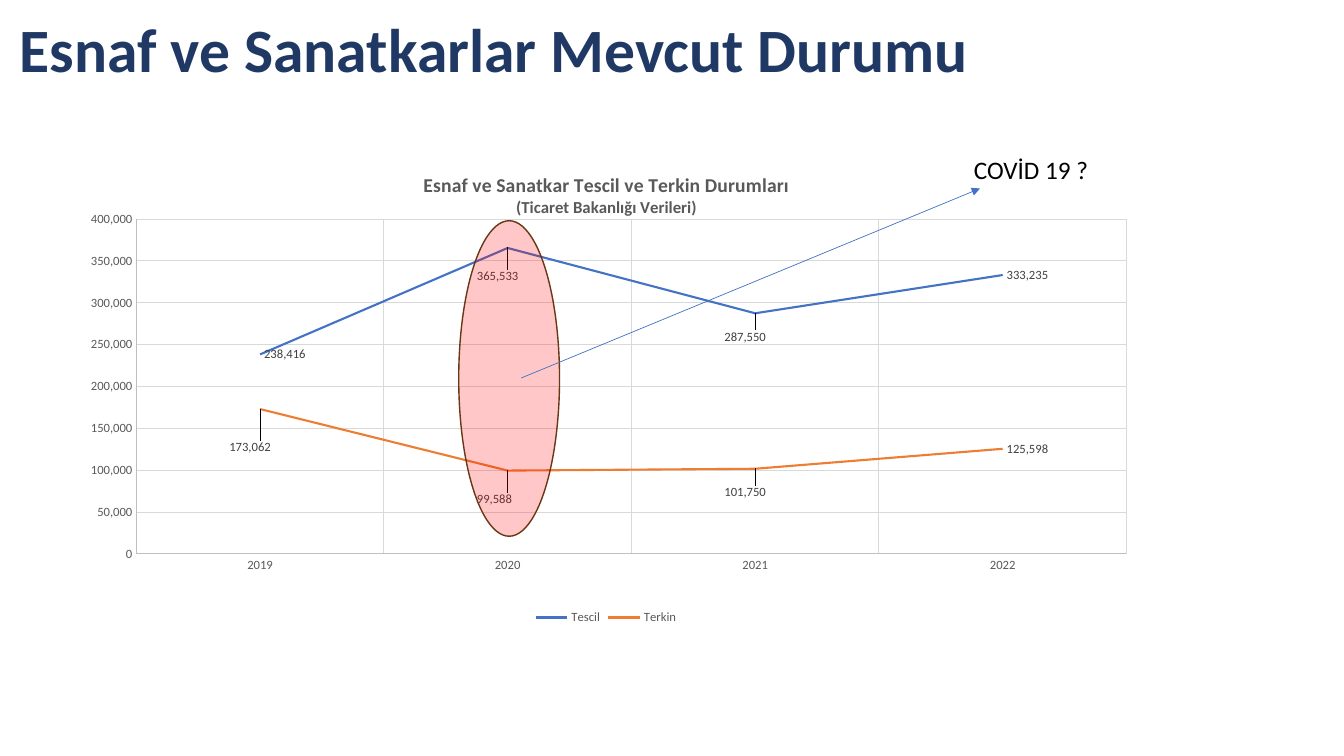
from dataclasses import dataclass

from lxml import etree
from pptx import Presentation
from pptx.chart.data import CategoryChartData
from pptx.dml.color import RGBColor
from pptx.enum.chart import XL_CHART_TYPE, XL_LABEL_POSITION, XL_LEGEND_POSITION, XL_TICK_MARK
from pptx.enum.shapes import MSO_CONNECTOR, MSO_SHAPE
from pptx.enum.text import MSO_ANCHOR
from pptx.oxml.ns import qn
from pptx.util import Inches, Pt

LINE_CHART = XL_CHART_TYPE.LINE
LABEL_RIGHT = XL_LABEL_POSITION.RIGHT
LEGEND_BOTTOM = XL_LEGEND_POSITION.BOTTOM
NO_TICK = XL_TICK_MARK.NONE
STRAIGHT = MSO_CONNECTOR.STRAIGHT
OVAL = MSO_SHAPE.OVAL
MIDDLE = MSO_ANCHOR.MIDDLE
TOP = MSO_ANCHOR.TOP


@dataclass(frozen=True)
class Theme:
    font: str = "Calibri"
    navy: str = "203864"
    black: str = "000000"
    gray: str = "595959"
    label_gray: str = "404040"
    axis: str = "BFBFBF"
    grid: str = "D9D9D9"
    blue: str = "4472C4"
    orange: str = "ED7D31"
    red: str = "FF0000"
    brown: str = "683715"
    heading_size: int = 44
    note_size: int = 18
    chart_title_size: int = 14
    chart_subtitle_size: int = 12
    chart_size: int = 9


THEME = Theme()
YEARS = ["2019", "2020", "2021", "2022"]
SERIES = [
    ("Tescil", THEME.blue, [238416, 365533, 287550, 333235],
     {1: (-0.03, 0.06), 2: (-0.03, 0.05)}),
    ("Terkin", THEME.orange, [173062, 99588, 101750, 125598],
     {0: (-0.03, 0.08), 1: (-0.03, 0.06), 2: (-0.03, 0.05)}),
]
CHART_TITLE = [
    ("Esnaf ve Sanatkar Tescil ve Terkin Durumları", THEME.chart_title_size),
    ("(Ticaret Bakanlığı Verileri)", THEME.chart_subtitle_size),
]


def style_font(font, size, color, bold=False):
    font.name = THEME.font
    font.size = Pt(size)
    font.bold = bold
    font.color.rgb = RGBColor.from_string(color)


def style_line(line, color, width):
    line.color.rgb = RGBColor.from_string(color)
    line.width = Pt(width)


def add_text(slide, box, text, size, color, bold=False, wrap=True, anchor=TOP, spacing=1.0):
    shape = slide.shapes.add_textbox(*map(Inches, box))
    frame = shape.text_frame
    frame.word_wrap = wrap
    frame.vertical_anchor = anchor
    paragraph = frame.paragraphs[0]
    paragraph.line_spacing = spacing
    run = paragraph.add_run()
    run.text = text
    style_font(run.font, size, color, bold)


def set_layout(parent, position, **settings):
    for existing in parent.findall(qn("c:layout")):
        parent.remove(existing)
    layout = etree.Element(qn("c:layout"))
    manual = etree.SubElement(layout, qn("c:manualLayout"))
    for name, value in settings.items():
        etree.SubElement(manual, qn(f"c:{name}"), val=str(value))
    parent.insert(position, layout)


def style_axis(axis):
    axis.major_tick_mark = NO_TICK
    axis.minor_tick_mark = NO_TICK
    axis.has_major_gridlines = True
    style_line(axis.major_gridlines.format.line, THEME.grid, 0.75)
    style_line(axis.format.line, THEME.axis, 0.75)
    style_font(axis.tick_labels.font, THEME.chart_size, THEME.gray)


def add_chart_title(chart):
    chart.has_title = True
    title = chart.chart_title
    frame = title.text_frame
    for index, (text, size) in enumerate(CHART_TITLE):
        paragraph = frame.add_paragraph() if index else frame.paragraphs[0]
        run = paragraph.add_run()
        run.text = text
        style_font(run.font, size, THEME.gray, bold=True)
    set_layout(title._element, 1, xMode="edge", yMode="edge", x=0.34, y=0.04)


def style_series(series, color, label_offsets):
    series.smooth = False
    style_line(series.format.line, color, 1.5)
    labels = series.data_labels
    labels.show_value = True
    labels.position = LABEL_RIGHT
    style_font(labels.font, THEME.chart_size, THEME.label_gray)
    for index, (x, y) in label_offsets.items():
        label = series.points[index].data_label
        style_font(label.font, THEME.chart_size, THEME.label_gray)
        label.position = LABEL_RIGHT
    for element in series._element.iter(qn("c:dLbl")):
        x, y = label_offsets[int(element.find(qn("c:idx")).get("val"))]
        set_layout(element, 1, x=x, y=y)


def add_registration_chart(slide, box):
    data = CategoryChartData(number_format="#,##0")
    data.categories = YEARS
    for name, _, values, _ in SERIES:
        data.add_series(name, values)
    chart = slide.shapes.add_chart(LINE_CHART, *map(Inches, box), data).chart
    style_font(chart.font, THEME.chart_size, THEME.gray)
    add_chart_title(chart)
    chart.has_legend = True
    chart.legend.position = LEGEND_BOTTOM
    chart.legend.include_in_layout = False
    style_font(chart.legend.font, THEME.chart_size, THEME.gray)
    style_axis(chart.category_axis)
    style_axis(chart.value_axis)
    chart.value_axis.minimum_scale = 0
    chart.value_axis.maximum_scale = 400000
    chart.value_axis.major_unit = 50000
    chart.value_axis.tick_labels.number_format = "#,##0"
    chart.value_axis.tick_labels.number_format_is_linked = False
    plot = chart.plots[0]
    plot.vary_by_categories = False
    for series, (_, color, _, offsets) in zip(plot.series, SERIES):
        style_series(series, color, offsets)
    plot_area = chart._chartSpace.find(f".//{qn('c:plotArea')}")
    set_layout(plot_area, 0, layoutTarget="inner", xMode="edge", yMode="edge",
               x=0.095, y=0.146, w=0.854, h=0.698)


def add_highlight(slide, box):
    shape = slide.shapes.add_shape(OVAL, *map(Inches, box))
    shape.shadow.inherit = False
    shape.fill.solid()
    shape.fill.fore_color.rgb = RGBColor.from_string(THEME.red)
    color = shape.fill._xPr.find(f".//{qn('a:srgbClr')}")
    etree.SubElement(color, qn("a:alpha"), val="22000")
    style_line(shape.line, THEME.brown, 1)


def add_arrow(slide, start, end):
    connector = slide.shapes.add_connector(STRAIGHT, *map(Inches, start + end))
    style_line(connector.line, THEME.blue, 0.5)
    properties = connector._element.spPr
    etree.SubElement(properties.find(qn("a:ln")), qn("a:tailEnd"), type="triangle")
    etree.SubElement(properties, qn("a:effectLst"))


def main():
    presentation = Presentation()
    presentation.slide_width = Inches(13.33)
    presentation.slide_height = Inches(7.5)
    slide = presentation.slides.add_slide(presentation.slide_layouts[6])
    add_text(slide, (0.1, 0.05, 11.5, 0.95), "Esnaf ve Sanatkarlar Mevcut Durumu",
             THEME.heading_size, THEME.navy, bold=True, anchor=MIDDLE, spacing=0.9)
    add_registration_chart(slide, (0.26, 1.48, 11.5, 4.76))
    add_highlight(slide, (4.55, 2.19, 1, 3.13))
    add_arrow(slide, (5.17, 3.75), (9.72, 1.87))
    add_text(slide, (9.56, 1.48, 1.35, 0.4), "COVİD 19 ?",
             THEME.note_size, THEME.black, wrap=False)
    presentation.save("out.pptx")


if __name__ == "__main__":
    main()
